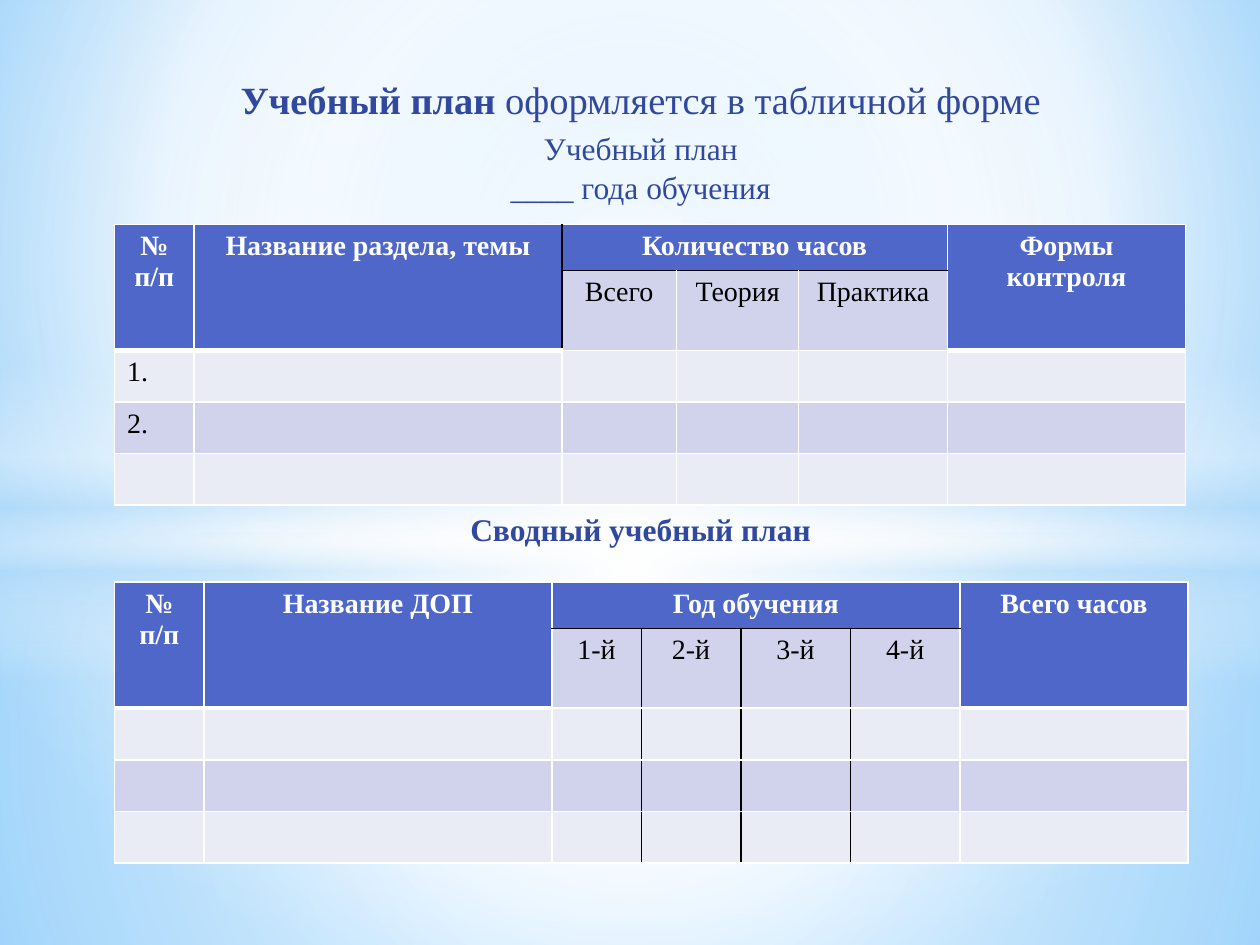
import pptx
import pptx.util
import pptx.oxml
import pptx.oxml.ns
import pptx.dml.color
import pptx.enum.shapes
import pptx.enum.text

Inches = pptx.util.Inches
Pt = pptx.util.Pt
qn = pptx.oxml.ns.qn
SHAPE = pptx.enum.shapes.MSO_SHAPE
ALIGN = pptx.enum.text.PP_ALIGN
HUES = {"white": "FFFFFF", "black": "000000", "navy": "31489F", "head": "4E67C8",
        "band": "D0D3EB", "pale": "E9EBF5", "sky": "9ED5FF", "blue": "5BB9FF", "mist": "B4DCFA"}
HEIGHTS = [0.35, 0.59, 0.41, 0.41, 0.41]


def color(name):
    return pptx.dml.color.RGBColor.from_string(HUES[name])


def text(par, words, size=16, hue="black", bold=False, align=ALIGN.CENTER, before=0, after=0):
    par.alignment = align
    par.space_before, par.space_after = Pt(before), Pt(after)
    run = par.add_run()
    run.text = words
    run.font.name = "Times New Roman"
    run.font.size = Pt(size)
    run.font.bold = bold
    run.font.color.rgb = color(hue)


def blend(fill, host, stops, focus=None):
    fill.solid()
    marks = "".join(
        f'<a:gs pos="{pos * 1000}"><a:srgbClr val="{HUES[hue]}">'
        f'<a:alpha val="{alpha * 1000}"/></a:srgbClr></a:gs>'
        for pos, hue, alpha in stops)
    if focus:
        sides = " ".join(f'{side}="{part * 1000}"' for side, part in zip("ltrb", focus))
        shade = f'<a:path path="circle"><a:fillToRect {sides}/></a:path>'
    else:
        shade = '<a:lin ang="5400000" scaled="0"/>'
    grad = pptx.oxml.parse_xml(
        f'<a:gradFill {pptx.oxml.ns.nsdecls("a")} rotWithShape="1">'
        f'<a:gsLst>{marks}</a:gsLst>{shade}</a:gradFill>')
    host.replace(host.find(qn("a:solidFill")), grad)


def glow(slide, kind, box, stops, focus=None):
    shape = slide.shapes.add_shape(kind, *map(Inches, box))
    shape.shadow.inherit = False
    shape.line.fill.background()
    blend(shape.fill, shape.element.spPr, stops, focus)


def backdrop(slide):
    fill = slide.background.fill
    fill.solid()
    blend(fill, slide.element.find(".//" + qn("p:bgPr")),
          [(0, "sky", 100), (60, "white", 100), (100, "blue", 100)], (20, 10, 20, 60))
    mid = (50, 50, 50, 50)
    glow(slide, SHAPE.RECTANGLE, (0, 4.23, 10, 3.27),
         [(0, "white", 91), (37, "white", 76), (100, "mist", 79)], mid)
    glow(slide, SHAPE.RECTANGLE, (0, 0, 10, 4.23),
         [(0, "white", 89), (48, "white", 62), (100, "mist", 79)], mid)
    glow(slide, SHAPE.RECTANGLE, (0, 2.9, 10, 2.5),
         [(0, "white", 0), (29, "white", 30), (45, "mist", 40),
          (55, "white", 26), (65, "mist", 60), (100, "white", 0)])
    glow(slide, SHAPE.OVAL, (0, 1.75, 10, 5.58), [(0, "white", 100), (54, "white", 0)], mid)


def titles(slide, box):
    frame = slide.shapes.add_textbox(*map(Inches, box)).text_frame
    frame.word_wrap = True
    frame.margin_top = Inches(0.08)
    lead = frame.paragraphs[0]
    text(lead, "Учебный план ", size=22, hue="navy", bold=True, after=3)
    text(lead, "оформляется в табличной форме", size=22, hue="navy", after=3)
    for words, bold, before in [("Учебный план", False, 1), ("____ года обучения", False, 1),
                                ("Сводный учебный план", True, 173.5)]:
        text(frame.add_paragraph(), words, size=18, hue="navy", bold=bold, before=before)


def edge(cell, lines):
    props = cell._tc.get_or_add_tcPr()
    for spot, side in enumerate("LRTB"):
        hue, width = lines.get(side, ("white", 1))
        props.insert(spot, pptx.oxml.parse_xml(
            f'<a:ln{side} {pptx.oxml.ns.nsdecls("a")} w="{Pt(width)}"><a:solidFill>'
            f'<a:srgbClr val="{HUES[hue]}"/></a:solidFill></a:ln{side}>'))


def plan(slide, box, widths, heads, subs, marks, dark):
    count = len(widths)
    grid = slide.shapes.add_table(len(HEIGHTS), count, *map(Inches, box)).table
    grid.first_row = grid.horz_banding = False
    for col, width in zip(grid.columns, widths):
        col.width = Inches(width)
    for row, height in zip(grid.rows, HEIGHTS):
        row.height = Inches(height)
    group = range(2, count - 1)
    ink = ("black", 1)
    for r in range(len(HEIGHTS)):
        for c in range(count):
            cell = grid.cell(r, c)
            top = r == 0 or (r == 1 and c not in group)
            cell.fill.solid()
            cell.fill.fore_color.rgb = color("head" if top else "band" if r % 2 else "pale")
            lines = {}
            if (r, c) in dark:
                lines["L"] = ink
            if (r, c + 1) in dark:
                lines["R"] = ink
            if c in group and r < 2:
                lines["T" if r else "B"] = ink
            elif top:
                lines["B"] = ("white", 3)
            edge(cell, lines)
    for c in (0, 1, count - 1):
        grid.cell(0, c).merge(grid.cell(1, c))
    grid.cell(0, 2).merge(grid.cell(0, count - 2))
    for c, words in zip((0, 1, 2, count - 1), heads):
        frame = grid.cell(0, c).text_frame
        for spot, line in enumerate(words.split("\n")):
            par = frame.add_paragraph() if spot else frame.paragraphs[0]
            text(par, line, hue="white", bold=True)
    for c, words in zip(group, subs):
        text(grid.cell(1, c).text_frame.paragraphs[0], words)
    for r, words in enumerate(marks, 2):
        text(grid.cell(r, 0).text_frame.paragraphs[0], words, align=ALIGN.LEFT)


def main():
    deck = pptx.Presentation()
    deck.slide_width, deck.slide_height = Inches(10), Inches(7.5)
    slide = deck.slides.add_slide(deck.slide_layouts[6])
    backdrop(slide)
    titles(slide, (0.28, 0.52, 9.61, 6.3))
    plan(slide, (0.91, 1.78, 8.5, sum(HEIGHTS)), [0.63, 2.92, 0.91, 0.97, 1.18, 1.89],
         ["№\nп/п", "Название раздела, темы", "Количество часов", "Формы контроля"],
         ["Всего", "Теория", "Практика"], ["1.", "2."], {(0, 2), (1, 2)})
    plan(slide, (0.91, 4.62, 8.5, sum(HEIGHTS)), [0.71, 2.76, 0.71, 0.79, 0.87, 0.87, 1.81],
         ["№\nп/п", "Название ДОП", "Год обучения", "Всего часов"],
         ["1-й", "2-й", "3-й", "4-й"], [],
         {(r, c) for r in range(1, 5) for c in (3, 4, 5)})
    deck.save("out.pptx")


if __name__ == "__main__":
    main()
